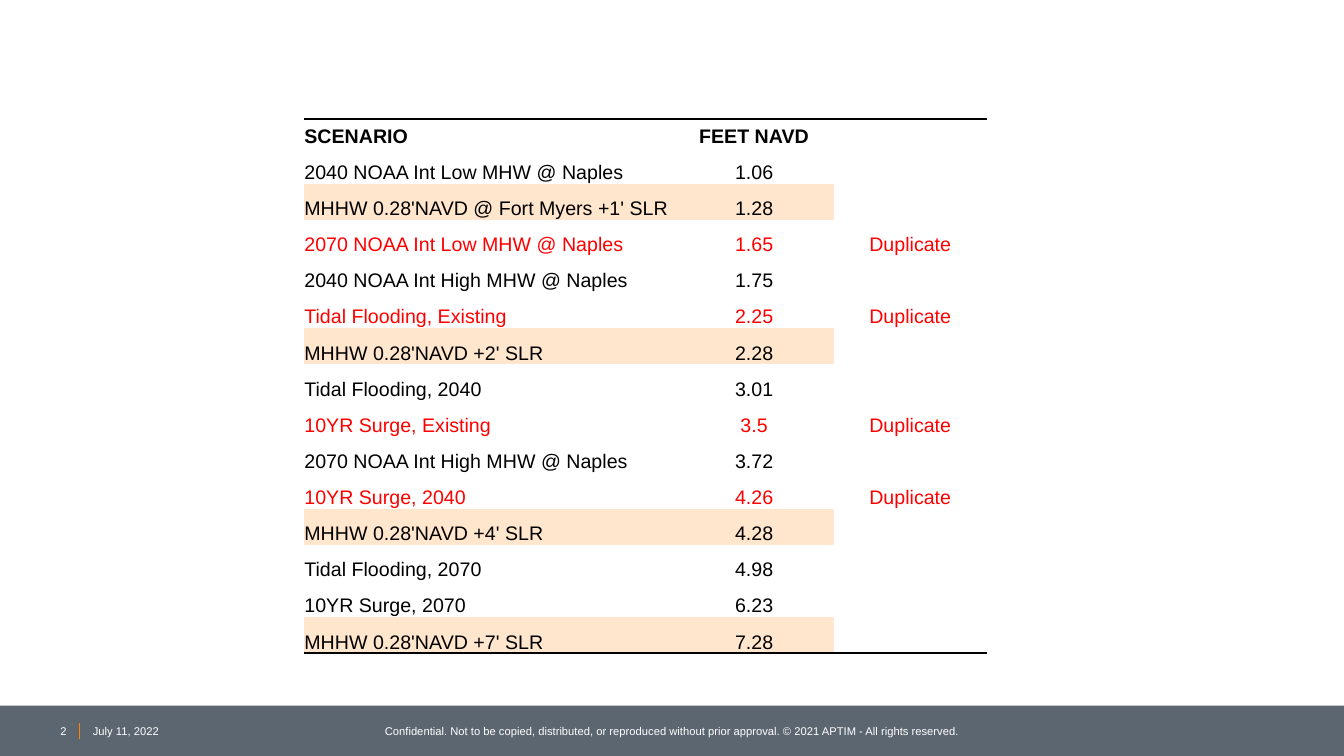
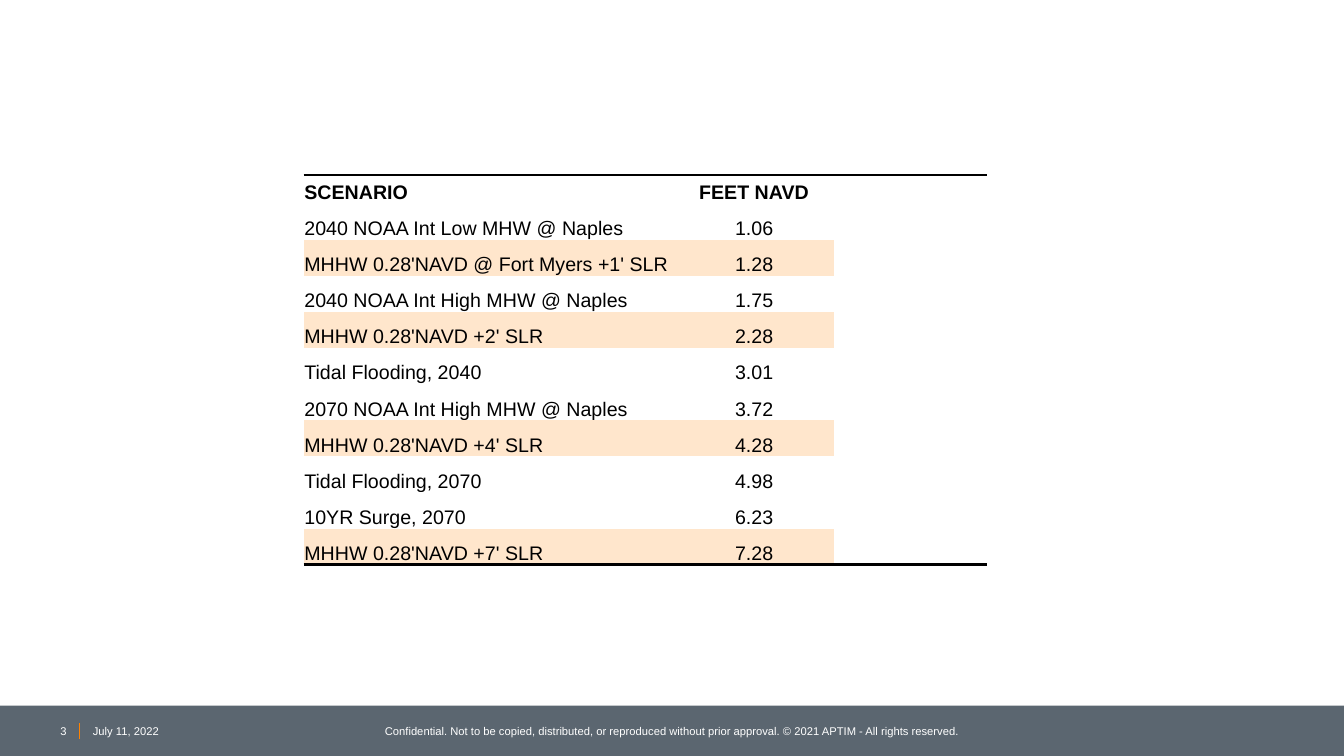
from lxml.etree import SubElement
from pptx import Presentation
from pptx.dml.color import RGBColor
from pptx.enum.shapes import MSO_CONNECTOR, MSO_SHAPE
from pptx.enum.text import MSO_ANCHOR, PP_ALIGN
from pptx.oxml import parse_xml
from pptx.oxml.ns import nsdecls, qn
from pptx.util import Cm, Pt

BLACK, WHITE, RED = "000000", "FFFFFF", "FF0000"
SLATE, ORANGE, PEACH = "5B6670", "FF8200", "FFE6CC"
NO_STYLE = "{2D5ABB26-0587-4C30-8999-92F81FD0307C}"
LEFT, CENTER, RIGHT = PP_ALIGN.LEFT, PP_ALIGN.CENTER, PP_ALIGN.RIGHT

SCENARIOS = [
    ("2040 NOAA Int Low MHW @ Naples", "1.06", ""),
    ("MHHW 0.28'NAVD @ Fort Myers +1' SLR", "1.28", ""),
    ("2070 NOAA Int Low MHW @ Naples", "1.65", "Duplicate"),
    ("2040 NOAA Int High MHW @ Naples", "1.75", ""),
    ("Tidal Flooding, Existing", "2.25", "Duplicate"),
    ("MHHW 0.28'NAVD +2' SLR", "2.28", ""),
    ("Tidal Flooding, 2040", "3.01", ""),
    ("10YR Surge, Existing", "3.5", "Duplicate"),
    ("2070 NOAA Int High MHW @ Naples", "3.72", ""),
    ("10YR Surge, 2040", "4.26", "Duplicate"),
    ("MHHW 0.28'NAVD +4' SLR", "4.28", ""),
    ("Tidal Flooding, 2070", "4.98", ""),
    ("10YR Surge, 2070", "6.23", ""),
    ("MHHW 0.28'NAVD +7' SLR", "7.28", ""),
]
UNIQUE = [row for row in SCENARIOS if not row[2]]
HEADER = ("SCENARIO", "FEET NAVD", "")
COL_WIDTHS = (9.35, 4.01, 3.86)
HEADER_HEIGHT, ROW_HEIGHT = 0.72, 0.86
NOTICE = ("Confidential. Not to be copied, distributed, or reproduced without "
          "prior approval. © 2021 APTIM - All rights reserved.")


def paint(fill, color):
    fill.solid()
    fill.fore_color.rgb = RGBColor.from_string(color)


def write(tf, text, size=14, color=BLACK, bold=False, align=LEFT, spacing=None):
    p = tf.paragraphs[0]
    p.alignment = align
    p.line_spacing = spacing
    if not text:
        p._p.get_or_add_endParaRPr().set("sz", str(size * 100))
        return
    r = p.add_run()
    r.text = text
    r.font.name = "Arial"
    r.font.size = Pt(size)
    r.font.bold = bold
    paint(r.font.fill, color)


prs = Presentation()
prs.slide_width, prs.slide_height = Cm(33.87), Cm(19.05)

for number, top, scenarios in ((2, 3, SCENARIOS), (3, 4.41, UNIQUE)):
    s = prs.slides.add_slide(prs.slide_layouts[6])

    band = s.shapes.add_shape(MSO_SHAPE.RECTANGLE, 0, Cm(17.78), prs.slide_width, Cm(1.27))
    band.shadow.inherit = False
    paint(band.fill, SLATE)
    band.line.fill.background()

    divider = s.shapes.add_connector(MSO_CONNECTOR.STRAIGHT, Cm(2.01), Cm(18.62), Cm(2.01), Cm(18.21))
    paint(divider.line.fill, ORANGE)
    divider.line.width = Pt(0.5)
    SubElement(divider._element.spPr, qn("a:effectLst"))

    for text, left, width, align in (
        ("July 11, 2022", 2.34, 5.31, LEFT),
        (NOTICE, 7.75, 18.39, CENTER),
        (str(number), 0.84, 0.84, RIGHT),
    ):
        tf = s.shapes.add_textbox(Cm(left), Cm(17.91), Cm(width), Cm(1.02)).text_frame
        tf.margin_left = tf.margin_right = tf.margin_top = tf.margin_bottom = 0
        tf.word_wrap = True
        tf.vertical_anchor = MSO_ANCHOR.MIDDLE
        write(tf, text, size=8, color=WHITE, align=align)

    rows = [HEADER] + scenarios
    last = len(rows) - 1
    height = HEADER_HEIGHT + last * ROW_HEIGHT
    table = s.shapes.add_table(len(rows), len(COL_WIDTHS), Cm(7.65), Cm(top),
                               Cm(sum(COL_WIDTHS)), Cm(height)).table
    table.first_row = table.horz_banding = False
    table._tbl.tblPr.find(qn("a:tableStyleId")).text = NO_STYLE
    for column, width in zip(table.columns, COL_WIDTHS):
        column.width = Cm(width)

    for i, row in enumerate(rows):
        table.rows[i].height = Cm(ROW_HEIGHT if i else HEADER_HEIGHT)
        for j, text in enumerate(row):
            cell = table.cell(i, j)
            cell.margin_left = cell.margin_right = cell.margin_top = Cm(0.02)
            cell.margin_bottom = 0
            cell.vertical_anchor = MSO_ANCHOR.BOTTOM
            if i in (0, last):
                edge = "lnB" if i else "lnT"
                cell._tc.get_or_add_tcPr().append(parse_xml(
                    f'<a:{edge} {nsdecls("a")} w="{Pt(2)}"><a:solidFill>'
                    f'<a:srgbClr val="{BLACK}"/></a:solidFill></a:{edge}>'))
            shaded = row[0].startswith("MHHW") and j < 2
            paint(cell.fill, PEACH if shaded else WHITE)
            write(cell.text_frame, text, color=RED if row[2] else BLACK, bold=i == 0,
                  align=CENTER if j else LEFT, spacing=1.5 if i else None)

prs.save("out.pptx")
